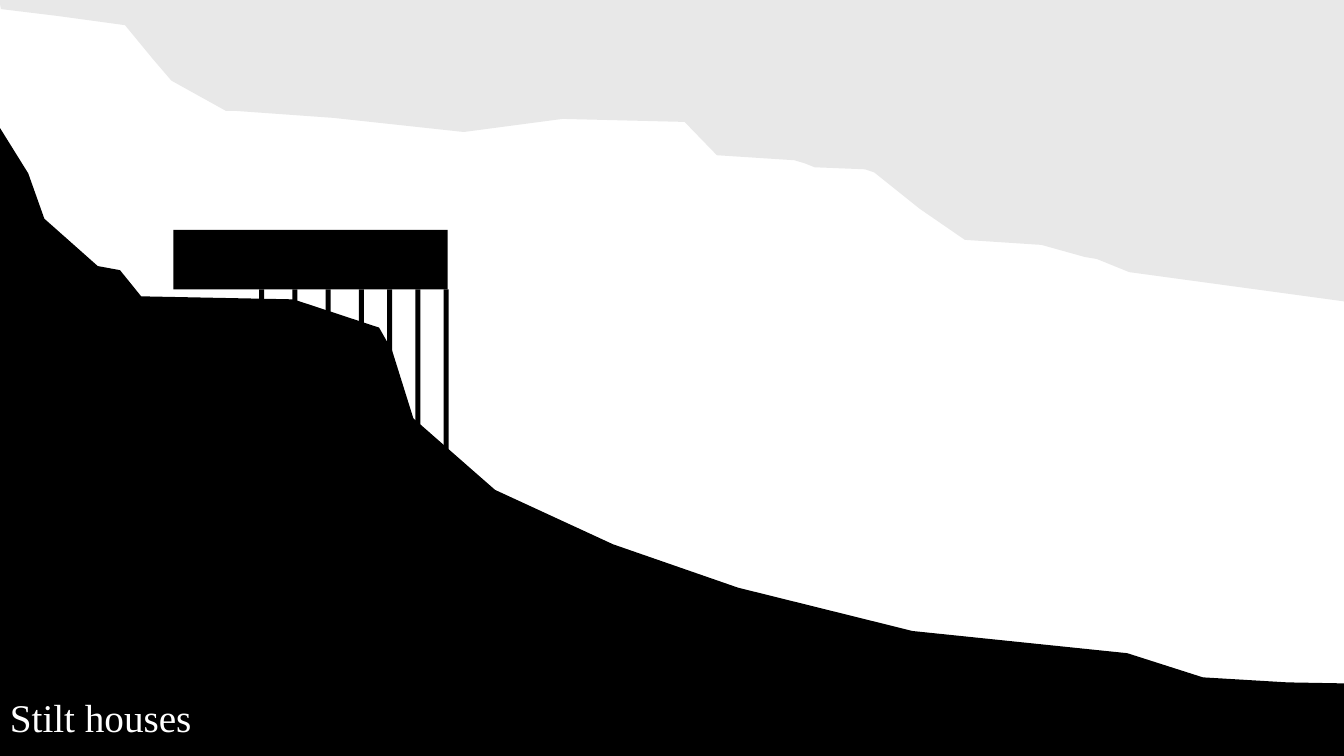
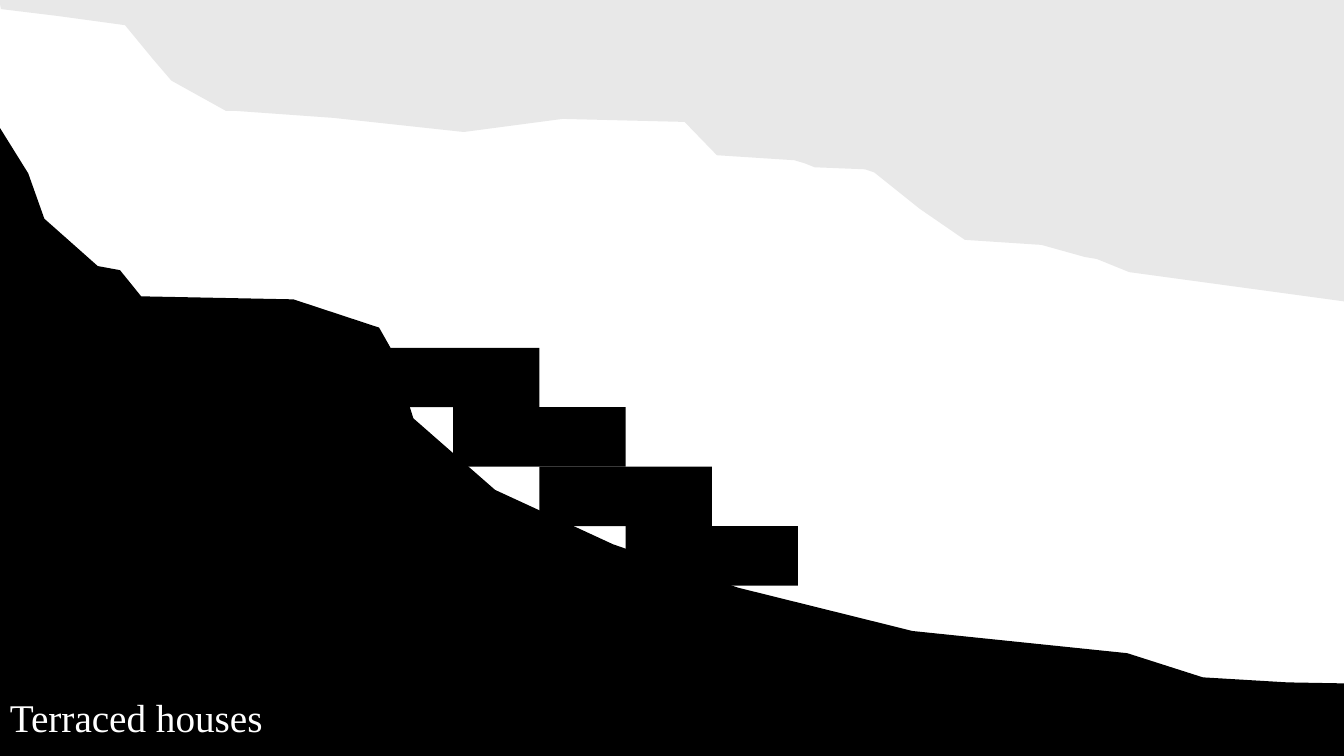
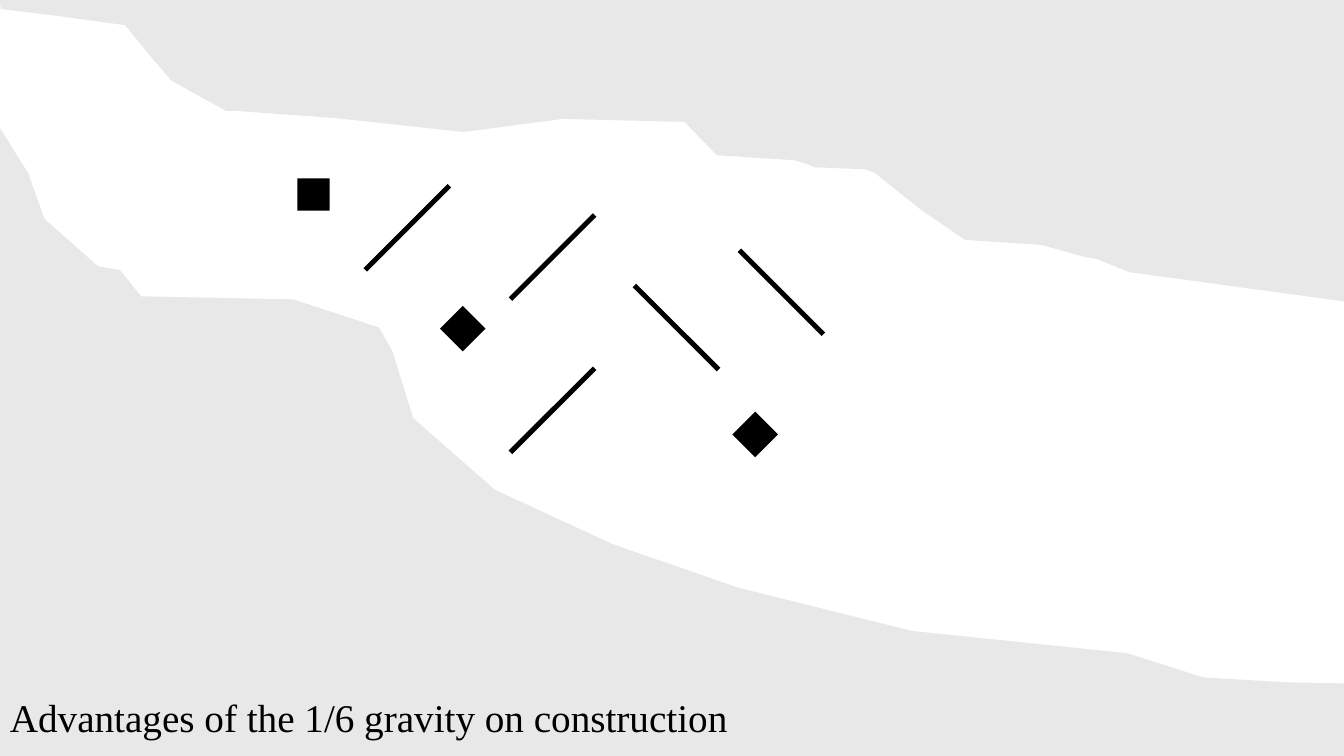
from pptx import Presentation
from pptx.dml.color import RGBColor
from pptx.enum.shapes import MSO_SHAPE
from pptx.util import Inches, Pt

COLORS = {"ink": "000000", "paper": "FFFFFF", "rock": "E8E8E8"}
FONT = "Times New Roman"
WIDTH, HEIGHT = 13.33, 7.5
BAR = 0.05  # thickness of stilts and beams

# Outlines are relative to the top left corner of the terrain.
SLOPE = [(0, 1.27), (0.28, 1.72), (0.44, 2.17), (0.97, 2.64), (1.19, 2.68),
         (1.4, 2.94), (2.91, 2.97), (3.76, 3.25), (3.89, 3.48), (4.1, 4.15),
         (4.91, 4.86), (6.08, 5.4), (7.32, 5.83), (9.05, 6.26),
         (11.18, 6.48), (11.93, 6.72), (12.77, 6.77), (13.35, 6.78),
         (13.35, 7.68), (0, 7.68)]
CEILING = [(-0.01, -0.01), (13.33, -0.01), (13.33, 2.99), (11.2, 2.7),
           (10.88, 2.57), (10.76, 2.55), (10.33, 2.43), (9.57, 2.38),
           (9.12, 2.07), (8.67, 1.71), (8.58, 1.68), (8.08, 1.66),
           (7.98, 1.62), (7.88, 1.59), (7.11, 1.54), (6.79, 1.21),
           (5.58, 1.18), (4.6, 1.31), (3.31, 1.17), (2.33, 1.1),
           (2.24, 1.1), (1.7, 0.8), (1.52, 0.59), (1.24, 0.25),
           (0.58, 0.16), (0.01, 0.09)]


def rgb(name):
    return RGBColor.from_string(COLORS[name])


def paint(sp, color):
    sp.shadow.inherit = False
    sp.fill.solid()
    sp.fill.fore_color.rgb = rgb(color)
    sp.line.fill.background()


def add_outline(s, points, x, y, color):
    pts = [(Inches(x + px), Inches(y + py)) for px, py in points]
    builder = s.shapes.build_freeform(*pts[0])
    builder.add_line_segments(pts[1:], close=True)
    paint(builder.convert_to_shape(), color)


def add_block(s, x, y, w, h, rotation=0):
    sp = s.shapes.add_shape(MSO_SHAPE.RECTANGLE, Inches(x), Inches(y),
                            Inches(w), Inches(h))
    sp.rotation = rotation
    paint(sp, "ink")


def add_terrain(s, x, y, slope_color):
    add_outline(s, SLOPE, x, y, slope_color)
    add_outline(s, CEILING, x, y, "rock")


def add_title(s, text, color, x, y, w, h):
    tf = s.shapes.add_textbox(Inches(x), Inches(y), Inches(w), Inches(h)).text_frame
    tf.word_wrap = True
    p = tf.paragraphs[0]
    p.line_spacing = 0.9
    p.space_before = Pt(10)
    r = p.add_run()
    r.text = text
    r.font.name = FONT
    r.font.size = Pt(28)
    r.font.color.rgb = rgb(color)


def add_stilt_house(s, x, y, w, h):
    """House filling the box, with stilts below it that end in the slope."""
    add_block(s, x, y, w, h)
    stilt_x = x + w - BAR / 2
    for gap in (0, 0.28, 0.28, 0.28, 0.33, 0.33, 0.33):
        stilt_x -= gap
        add_block(s, stilt_x - BAR / 2 + 0.01, y + h, BAR, 1.94)


def add_terraced_houses(s, x, y, w, h, count=4):
    """Houses of one size, each half a width right of and below the last."""
    for i in range(count):
        add_block(s, x + i * w / 2, y + i * h, w, h)


def add_floating_parts(s, x, y):
    """Beams and cubes drifting in the cave, placed by their centres."""
    beams = [(1.09, 0.49, 315), (3.76, 1.48, 45), (2.53, 0.78, 315),
             (2.53, 2.3, 315), (4.8, 1.13, 45)]
    cubes = [(1.64, 1.49, 45), (4.54, 2.54, 315), (0.16, 0.16, 0)]
    for parts, w, h in ((beams, 1.18, BAR), (cubes, 0.32, 0.32)):
        for cx, cy, rotation in parts:
            add_block(s, x + cx - w / 2, y + cy - h / 2, w, h, rotation)


def add_cave_slide(prs, title, slope_color, title_color):
    s = prs.slides.add_slide(prs.slide_layouts[6])
    s.background.fill.solid()
    s.background.fill.fore_color.rgb = rgb("paper")
    add_terrain(s, 0, 0, slope_color)
    add_title(s, title, title_color, 0, 6.88, 10, 0.79)
    return s


def main():
    prs = Presentation()
    prs.slide_width, prs.slide_height = Inches(WIDTH), Inches(HEIGHT)

    s = add_cave_slide(prs, "Stilt houses", "ink", "paper")
    add_stilt_house(s, 1.72, 2.28, 2.72, 0.59)

    s = add_cave_slide(prs, "Terraced houses", "ink", "paper")
    add_terraced_houses(s, 3.64, 3.45, 1.71, 0.59)

    s = add_cave_slide(prs, "Advantages of the 1/6 gravity on construction",
                       "rock", "ink")
    add_floating_parts(s, 2.95, 1.77)

    prs.save("out.pptx")


if __name__ == "__main__":
    main()
